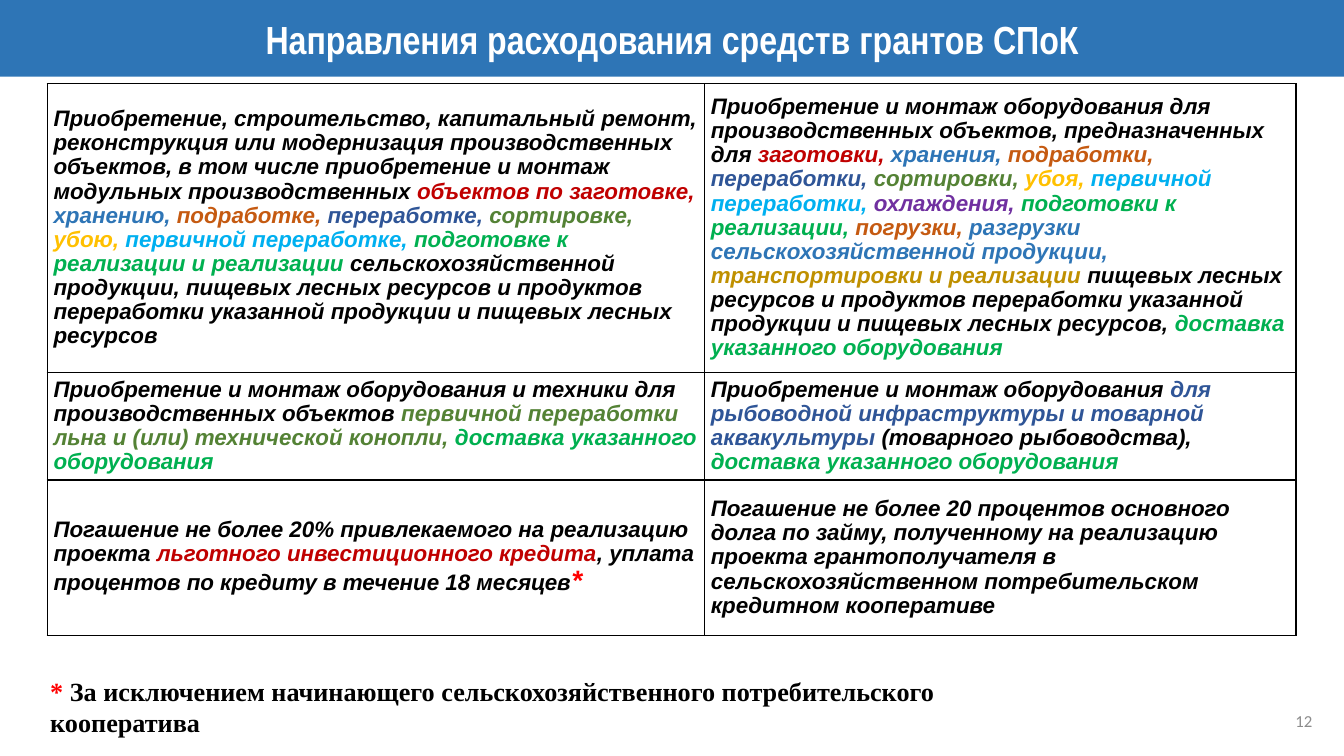
from pptx import Presentation, util as u
from pptx.dml import color
from pptx.enum import shapes, text
from pptx.oxml import parse_xml
from pptx.oxml import ns

Pt = u.Pt

# Content
BLACK, WHITE, GREY, BRIGHT_RED = "000000", "FFFFFF", "8C8C8C", "FF0000"
RED, BLUE, ORANGE, NAVY = "C00000", "2E75B6", "C55A11", "2F5597"
OLIVE, YELLOW, SKY, GREEN = "548235", "FFC000", "00B0F0", "00B050"
PURPLE, GOLD = "7030A0", "BF9000"

TITLE = [("Направления расходования средств грантов СПоК", WHITE)]
FOOTNOTE = [
    ("*", BRIGHT_RED),
    (" За исключением начинающего сельскохозяйственного потребительского кооператива", BLACK),
]
PAGE = [("12", GREY)]
DELIVERY = ("доставка указанного оборудования", GREEN)

# Each cell is a list of (words, colour[, size])
DIRECTIONS = [
    [
        [
            ("Приобретение, строительство, капитальный ремонт, реконструкция или "
             "модернизация производственных объектов, в том числе приобретение и "
             "монтаж модульных производственных ", BLACK),
            ("объектов по заготовке, ", RED),
            ("хранению, ", BLUE),
            ("подработке, ", ORANGE),
            ("переработке, ", NAVY),
            ("сортировке, ", OLIVE),
            ("убою, ", YELLOW),
            ("первичной переработке, ", SKY),
            ("подготовке к реализации и реализации", GREEN),
            (" сельскохозяйственной продукции, пищевых лесных ресурсов и продуктов "
             "переработки указанной продукции и пищевых лесных ресурсов", BLACK),
        ],
        [
            ("Приобретение и монтаж оборудования для производственных объектов, "
             "предназначенных для ", BLACK),
            ("заготовки, ", RED),
            ("хранения, ", BLUE),
            ("подработки, ", ORANGE),
            ("переработки, ", NAVY),
            ("сортировки, ", OLIVE),
            ("убоя, ", YELLOW),
            ("первичной переработки, ", SKY),
            ("охлаждения, ", PURPLE),
            ("подготовки к реализации, ", GREEN),
            ("погрузки, ", ORANGE),
            ("разгрузки сельскохозяйственной продукции, ", BLUE),
            ("транспортировки и реализации", GOLD),
            (" пищевых лесных ресурсов и продуктов переработки указанной продукции "
             "и пищевых лесных ресурсов, ", BLACK),
            DELIVERY,
        ],
    ],
    [
        [
            ("Приобретение и монтаж оборудования и техники для производственных "
             "объектов ", BLACK),
            ("первичной переработки льна и (или) технической конопли, ", OLIVE),
            DELIVERY,
        ],
        [
            ("Приобретение и монтаж оборудования ", BLACK),
            ("для рыбоводной инфраструктуры и товарной аквакультуры", NAVY),
            (" (товарного рыбоводства), ", BLACK),
            DELIVERY,
        ],
    ],
    [
        [
            ("Погашение не более 20% привлекаемого на реализацию проекта ", BLACK),
            ("льготного инвестиционного кредита", RED),
            (", уплата процентов по кредиту в течение 18 месяцев", BLACK),
            ("*", BRIGHT_RED, 20),
        ],
        [
            ("Погашение не более 20 процентов основного долга по займу, полученному "
             "на реализацию проекта грантополучателя в сельскохозяйственном "
             "потребительском кредитном кооперативе", BLACK),
        ],
    ],
]

# Layout and formats, in points
SLIDE_W, SLIDE_H = 960, 540
TABLE_LEFT, TABLE_TOP = 33.8, 59.8
COLUMNS = [469.5, 422.5]
ROWS = [206, 77, 111]
CELL_FORMAT = dict(margin_left=Pt(4.5), margin_right=Pt(4.5), margin_top=0,
                   margin_bottom=0, vertical_anchor=text.MSO_ANCHOR.MIDDLE)
CELL_FONT = dict(name="Arial", size=16, bold=True, italic=True)
TITLE_FONT = dict(name="Arial Narrow", size=28, bold=True)
FOOTNOTE_FONT = dict(name="Times New Roman", size=18.7, bold=True)
PAGE_FONT = dict(name="Calibri", size=12)


def rgb(code):
    return color.RGBColor.from_string(code)


def write(frame, runs, font, align=text.PP_ALIGN.LEFT, spacing=None):
    paragraph = frame.paragraphs[0]
    paragraph.alignment = align
    paragraph.line_spacing = spacing
    for words, shade, *size in runs:
        run = paragraph.add_run()
        run.text = words
        values = dict(font, size=Pt(size[0] if size else font["size"]))
        for key, value in values.items():
            setattr(run.font, key, value)
        run.font.color.rgb = rgb(shade)


def outline(cell):
    properties = cell._tc.get_or_add_tcPr()
    for position, side in enumerate(("lnL", "lnR", "lnT", "lnB")):
        properties.insert(position, parse_xml(
            f'<a:{side} {ns.nsdecls("a")} w="{Pt(1)}"><a:solidFill>'
            f'<a:srgbClr val="{BLACK}"/></a:solidFill></a:{side}>'))


def add_text(slide, box, runs, font, anchor, align=text.PP_ALIGN.LEFT):
    frame = slide.shapes.add_textbox(*map(Pt, box)).text_frame
    frame.word_wrap = True
    frame.vertical_anchor = anchor
    write(frame, runs, font, align)
    return frame


def add_directions(slide):
    table = slide.shapes.add_table(
        len(ROWS), len(COLUMNS), Pt(TABLE_LEFT), Pt(TABLE_TOP),
        Pt(sum(COLUMNS)), Pt(sum(ROWS))).table
    table.first_row = table.horz_banding = False
    for column, width in zip(table.columns, COLUMNS):
        column.width = Pt(width)
    for row, height, directions in zip(table.rows, ROWS, DIRECTIONS):
        row.height = Pt(height)
        for cell, runs in zip(row.cells, directions):
            for key, value in CELL_FORMAT.items():
                setattr(cell, key, value)
            cell.fill.background()
            outline(cell)
            write(cell.text_frame, runs, CELL_FONT, spacing=0.97)


def add_title(slide):
    band = slide.shapes.add_shape(
        shapes.MSO_SHAPE.RECTANGLE, 0, 0, Pt(SLIDE_W), Pt(54.8))
    band.shadow.inherit = False
    band.fill.solid()
    band.fill.fore_color.rgb = rgb(BLUE)
    band.line.fill.background()
    band.text_frame.vertical_anchor = text.MSO_ANCHOR.MIDDLE
    write(band.text_frame, TITLE, TITLE_FONT, text.PP_ALIGN.CENTER)


def main():
    deck = Presentation()
    deck.slide_width, deck.slide_height = Pt(SLIDE_W), Pt(SLIDE_H)
    slide = deck.slides.add_slide(deck.slide_layouts[6])

    add_directions(slide)
    add_title(slide)

    # Page number and footnote
    add_text(slide, (728.6, 500.5, 216, 28.8), PAGE, PAGE_FONT,
             text.MSO_ANCHOR.MIDDLE, text.PP_ALIGN.RIGHT)
    footnote = add_text(slide, (28.8, 478.8, 757.4, 30.2), FOOTNOTE, FOOTNOTE_FONT,
                        text.MSO_ANCHOR.TOP)
    footnote.auto_size = text.MSO_AUTO_SIZE.SHAPE_TO_FIT_TEXT

    deck.save("out.pptx")


if __name__ == "__main__":
    main()
